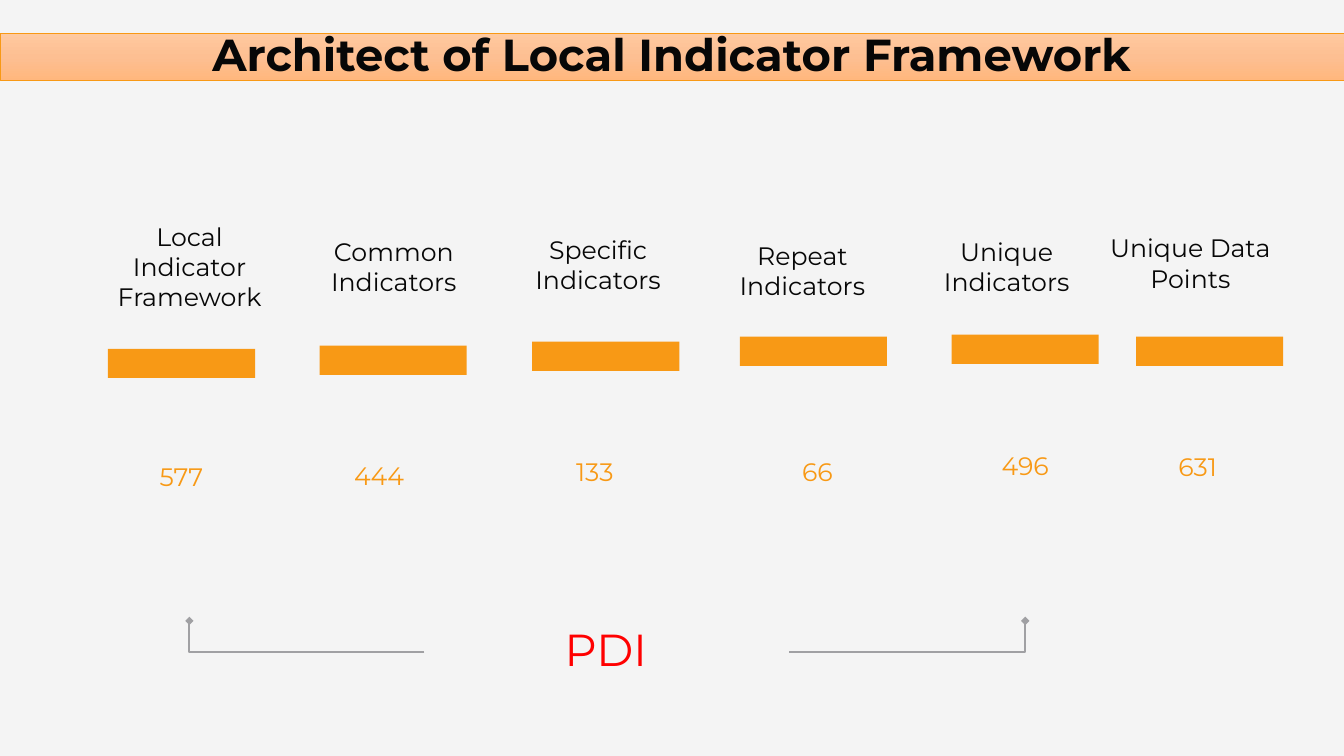
from dataclasses import dataclass

from lxml.etree import SubElement
from pptx import Presentation
from pptx.dml.color import RGBColor
from pptx.enum.shapes import MSO_CONNECTOR, MSO_SHAPE
from pptx.enum.text import MSO_ANCHOR, MSO_AUTO_SIZE, PP_ALIGN
from pptx.oxml import parse_xml
from pptx.oxml.ns import nsdecls, qn
from pptx.shapes.autoshape import Shape
from pptx.slide import Slide
from pptx.util import Inches, Length, Pt

SLIDE_WIDTH = Inches(13.33)
SLIDE_HEIGHT = Inches(7.5)


@dataclass(frozen=True)
class Theme:
    font: str = "Montserrat"
    background: str = "F4F4F4"
    ink: str = "070707"
    accent: str = "F89915"
    alert: str = "FF0000"
    bracket: str = "A0A0A3"
    banner: tuple[str, ...] = ("FEC9A0", "FDBF92", "FFB77D")
    heading_size: int = 32
    body_size: int = 18
    banner_line: float = 0.5
    bracket_line: float = 1.5


@dataclass(frozen=True)
class Area:
    """Percentages of the slide's width and height."""

    left: float
    top: float
    width: float
    height: float

    def lengths(self) -> tuple[Length, Length, Length, Length]:
        return across(self.left), down(self.top), across(self.width), down(self.height)


@dataclass(frozen=True)
class Indicator:
    label: str
    value: str
    label_area: Area
    bar_left: float
    bar_top: float
    value_area: Area


@dataclass(frozen=True)
class Bracket:
    inner: float
    outer: float


THEME = Theme()
LABEL_LEFT, LABEL_PITCH, LABEL_WIDTH = 7.28, 15.2, 13.65
LAST_LABEL_LEFT = 81.75
TALL_LABEL, SHORT_LABEL = 16.4, 14.93
BAR_WIDTH, BAR_HEIGHT = 10.95, 3.87
VALUE_WIDTH, TALL_VALUE, SHORT_VALUE = 7.35, 9.87, 7.07
BRACKET_TOP, BRACKET_BOTTOM = 82.13, 86.27
TITLE_AREA = Area(0, 4.4, 100, 6.27)
PDI_AREA = Area(37.8, 82.8, 14.55, 6)


def label_area(column: int, top: float, height: float) -> Area:
    return Area(LABEL_LEFT + column * LABEL_PITCH, top, LABEL_WIDTH, height)


def value_area(left: float, top: float, height: float) -> Area:
    return Area(left, top, VALUE_WIDTH, height)


INDICATORS = (
    Indicator("Local Indicator Framework", "577", label_area(0, 27.07, TALL_LABEL),
              8.03, 46.13, value_area(9.83, 58.13, TALL_VALUE)),
    Indicator("Common Indicators", "444", label_area(1, 27.07, TALL_LABEL),
              23.78, 45.73, value_area(24.53, 58, TALL_VALUE)),
    Indicator("Specific Indicators", "133", label_area(2, 26.8, TALL_LABEL),
              39.6, 45.2, value_area(40.58, 58.8, SHORT_VALUE)),
    Indicator("Repeat Indicators", "66", label_area(3, 28.27, SHORT_LABEL),
              55.05, 44.53, value_area(57.15, 58.8, SHORT_VALUE)),
    Indicator("Unique Indicators", "496", label_area(4, 27.73, SHORT_LABEL),
              70.8, 44.27, value_area(72.6, 58, SHORT_VALUE)),
    Indicator("Unique Data Points", "631",
              Area(LAST_LABEL_LEFT, 27.33, LABEL_WIDTH, SHORT_LABEL),
              84.53, 44.53, value_area(85.43, 58.13, SHORT_VALUE)),
)
BRACKETS = (Bracket(31.58, 14.1), Bracket(58.74, 76.29))


def across(share: float) -> Length:
    return Length(round(SLIDE_WIDTH * share / 100))


def down(share: float) -> Length:
    return Length(round(SLIDE_HEIGHT * share / 100))


def write_text(shape: Shape, text: str, size: int, color: str, bold: bool = False) -> None:
    frame = shape.text_frame
    frame.word_wrap = True
    frame.auto_size = MSO_AUTO_SIZE.NONE
    frame.vertical_anchor = MSO_ANCHOR.MIDDLE
    frame.margin_left = frame.margin_right = across(0.75)
    frame.margin_top = frame.margin_bottom = down(1.33)
    frame.text = text
    paragraph = frame.paragraphs[0]
    paragraph.alignment = PP_ALIGN.CENTER
    paragraph.font.name = THEME.font
    paragraph.font.size = Pt(size)
    paragraph.font.bold = bold
    paragraph.font.color.rgb = RGBColor.from_string(color)


def add_text(slide: Slide, area: Area, text: str, size: int, color: str) -> None:
    write_text(slide.shapes.add_textbox(*area.lengths()), text, size, color)


def format_title(slide: Slide) -> None:
    title = slide.shapes.title
    title.left, title.top, title.width, title.height = TITLE_AREA.lengths()
    write_text(title, "Architect of Local Indicator Framework",
               THEME.heading_size, THEME.ink, bold=True)
    title.text_frame.paragraphs[0].line_spacing = 0.9
    last = len(THEME.banner) - 1
    stops = "".join(
        f'<a:gs pos="{index * 100000 // last}"><a:srgbClr val="{color}"/></a:gs>'
        for index, color in enumerate(THEME.banner)
    )
    title.fill.background()
    properties = title.element.spPr
    properties.replace(properties.find(qn("a:noFill")), parse_xml(
        f'<a:gradFill {nsdecls("a")} rotWithShape="1"><a:gsLst>{stops}</a:gsLst>'
        '<a:lin ang="5400000" scaled="0"/></a:gradFill>'
    ))
    title.line.color.rgb = RGBColor.from_string(THEME.accent)
    title.line.width = Pt(THEME.banner_line)


def add_indicator(slide: Slide, indicator: Indicator) -> None:
    add_text(slide, indicator.label_area, indicator.label, THEME.body_size, THEME.ink)
    bar_area = Area(indicator.bar_left, indicator.bar_top, BAR_WIDTH, BAR_HEIGHT)
    bar = slide.shapes.add_shape(MSO_SHAPE.RECTANGLE, *bar_area.lengths())
    bar.shadow.inherit = False
    bar.fill.solid()
    bar.fill.fore_color.rgb = RGBColor.from_string(THEME.accent)
    bar.line.fill.background()
    add_text(slide, indicator.value_area, indicator.value, THEME.body_size, THEME.accent)


def add_bracket(slide: Slide, bracket: Bracket) -> None:
    connector = slide.shapes.add_connector(
        MSO_CONNECTOR.ELBOW,
        across(bracket.inner), down(BRACKET_BOTTOM),
        across(bracket.outer), down(BRACKET_TOP),
    )
    connector.line.color.rgb = RGBColor.from_string(THEME.bracket)
    connector.line.width = Pt(THEME.bracket_line)
    properties = connector.element.spPr
    properties.find(qn("a:prstGeom")).set("prst", "bentConnector2")
    SubElement(properties.find(qn("a:ln")), qn("a:tailEnd"), type="diamond")
    SubElement(properties, qn("a:effectLst"))


def main() -> None:
    presentation = Presentation()
    presentation.slide_width = SLIDE_WIDTH
    presentation.slide_height = SLIDE_HEIGHT
    slide = presentation.slides.add_slide(presentation.slide_layouts.get_by_name("Title Only"))
    slide.background.fill.solid()
    slide.background.fill.fore_color.rgb = RGBColor.from_string(THEME.background)
    format_title(slide)
    for indicator in INDICATORS:
        add_indicator(slide, indicator)
    add_text(slide, PDI_AREA, "PDI", THEME.heading_size, THEME.alert)
    for bracket in BRACKETS:
        add_bracket(slide, bracket)
    presentation.save("out.pptx")


if __name__ == "__main__":
    main()
